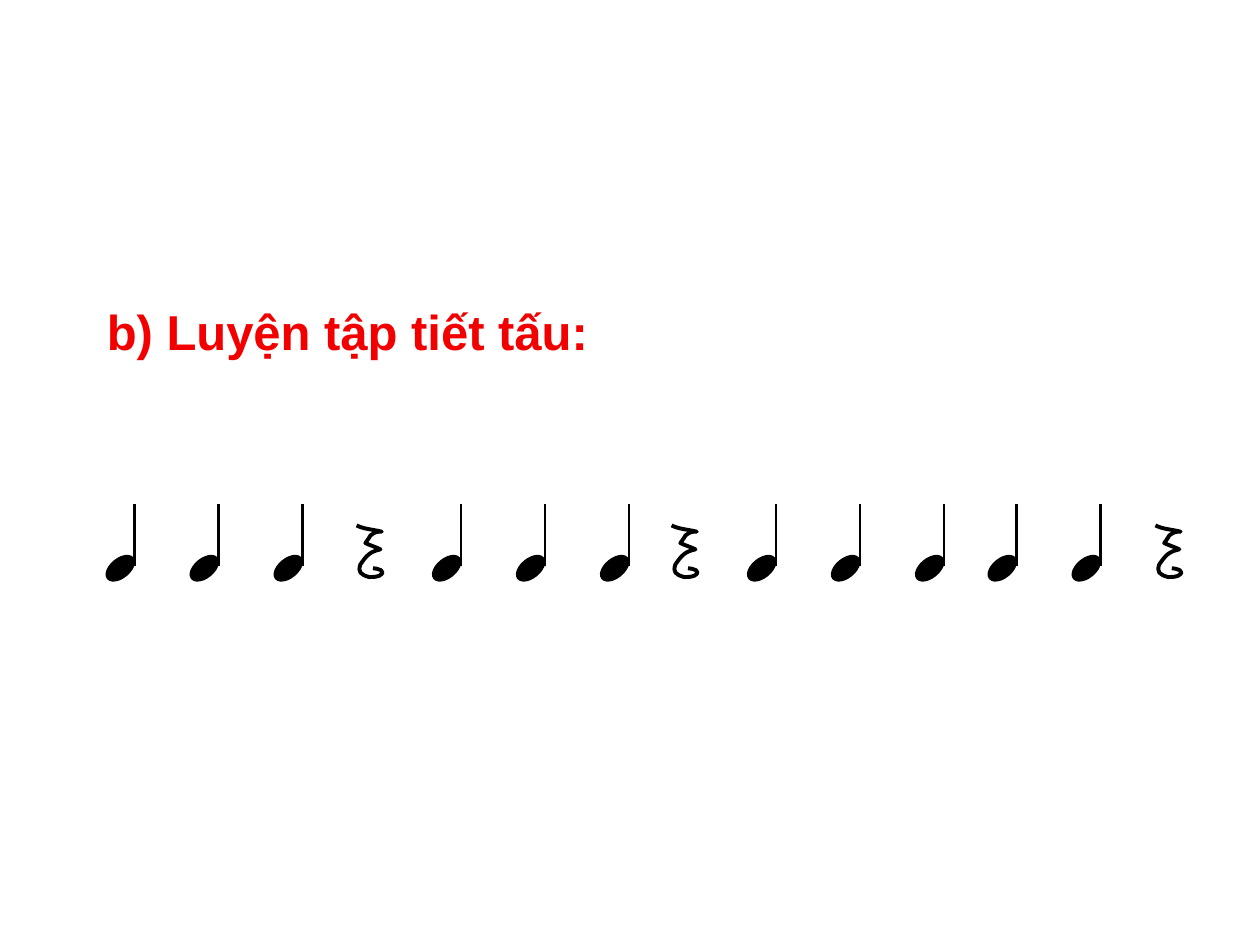
from dataclasses import dataclass

from pptx import Presentation
from pptx.dml.color import RGBColor
from pptx.enum.shapes import MSO_CONNECTOR as CONN, MSO_SHAPE as SHAPE
from pptx.enum.text import MSO_AUTO_SIZE as AUTO
from pptx.oxml.ns import qn
from pptx.util import Inches, Pt


@dataclass(frozen=True)
class Theme:
    font: str = "Arial"
    title: RGBColor = RGBColor(0xF2, 0x00, 0x00)
    ink: RGBColor = RGBColor(0, 0, 0)
    title_size: Pt = Pt(28)
    note_line: Pt = Pt(1.5)
    rest_line: Pt = Pt(2.25)


THEME = Theme()
BEAT = 2 / 3
NOTE_RUNS = [(0.83, 3), (3.42, 3), (5.92, 3), (7.83, 2)]
REST_LEFTS = [2.83, 5.33, 9.17]
REST_CURVES = [
    [(0.06, 0.03), (0.12, 0.03), (0.2, 0.05)],
    [(0.16, 0.05), (0.15, 0.05), (0.11, 0.08)],
    [(0.1, 0.1), (0.07, 0.14), (0.07, 0.14)],
    [(0.11, 0.16), (0.15, 0.17), (0.19, 0.19)],
    [(0.1, 0.21), (0.08, 0.24), (0.03, 0.31)],
    [(0.01, 0.37), (0.03, 0.39), (0.1, 0.41)],
    [(0.13, 0.41), (0.15, 0.41), (0.18, 0.4)],
    [(0.25, 0.36), (0.16, 0.34), (0.13, 0.34)],
]


def add_text(slide, text, left, top, width, height, *, size, color, bold=False):
    box = slide.shapes.add_textbox(
        Inches(left), Inches(top), Inches(width), Inches(height))
    tf = box.text_frame
    tf.word_wrap = True
    tf.auto_size = AUTO.SHAPE_TO_FIT_TEXT
    r = tf.paragraphs[0].add_run()
    r.text = text
    r.font.name = THEME.font
    r.font.size = size
    r.font.bold = bold
    r.font.color.rgb = color
    return box


def ink_line(sp, width):
    sp.line.color.rgb = THEME.ink
    sp.line.width = width


def add_note(slide, left, top):
    shapes = slide.shapes.add_group_shape().shapes
    head = shapes.add_shape(
        SHAPE.OVAL, Inches(left), Inches(top + 0.44), Inches(0.25), Inches(0.14))
    head.rotation = 320.7
    head.shadow.inherit = False
    head.fill.solid()
    head.fill.fore_color.rgb = THEME.ink
    ink_line(head, THEME.note_line)
    x = Inches(left + 0.24)
    stem = shapes.add_connector(
        CONN.STRAIGHT, x, Inches(top), x, Inches(top + 0.49))
    ink_line(stem, THEME.note_line)
    props = stem._element.spPr
    props.append(props.makeelement(qn("a:effectLst"), {}))


def curve_segments(sp):
    lines = list(sp._element.iter(qn("a:lnTo")))
    for i in range(0, len(lines), 3):
        curve = lines[i].makeelement(qn("a:cubicBezTo"), {})
        lines[i].addprevious(curve)
        for line in lines[i:i + 3]:
            curve.append(line[0])
            line.getparent().remove(line)


def add_rest(slide, left, top):
    points = [(Inches(left + x), Inches(top + y))
              for curve in REST_CURVES for x, y in curve]
    builder = slide.shapes.build_freeform(Inches(left), Inches(top))
    builder.add_line_segments(points, close=False)
    sp = builder.convert_to_shape()
    curve_segments(sp)
    sp.shadow.inherit = False
    sp.fill.background()
    ink_line(sp, THEME.rest_line)


def add_rhythm(slide, top):
    for left, count in NOTE_RUNS:
        for i in range(count):
            add_note(slide, left + i * BEAT, top)
    for left in REST_LEFTS:
        add_rest(slide, left, top + 0.17)


def main():
    prs = Presentation()
    prs.slide_width, prs.slide_height = Inches(10), Inches(7.5)
    slide = prs.slides.add_slide(prs.slide_layouts[6])
    add_rhythm(slide, 4)
    add_text(slide, "b) Luyện tập tiết tấu:", 0.75, 2.34, 4.33, 0.57,
             size=THEME.title_size, color=THEME.title, bold=True)
    prs.save("out.pptx")


if __name__ == "__main__":
    main()
